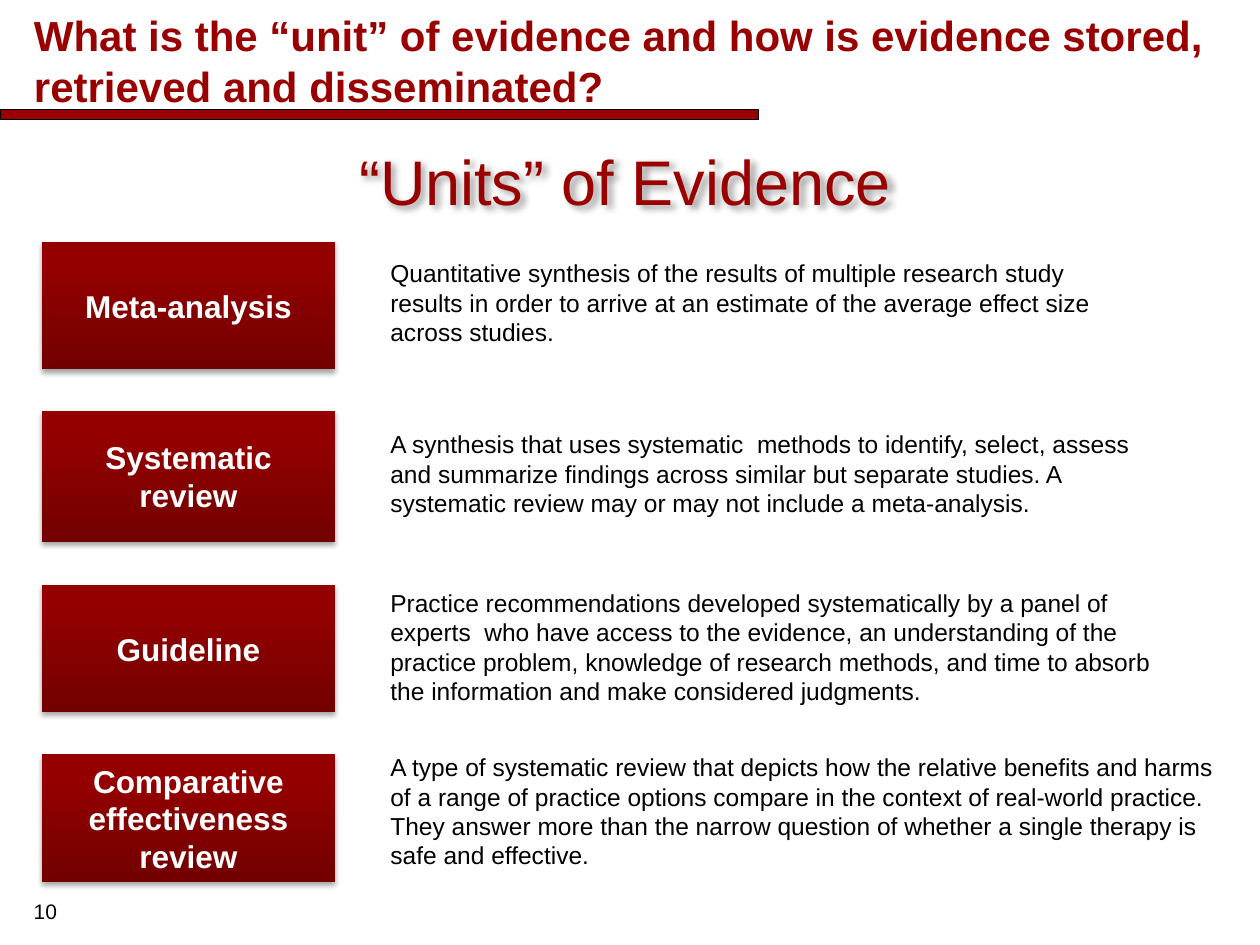
from copy import deepcopy

from lxml import etree
from pptx import Presentation
from pptx.dml.color import RGBColor
from pptx.enum.shapes import MSO_SHAPE
from pptx.enum.text import MSO_ANCHOR, MSO_AUTO_SIZE, PP_ALIGN
from pptx.oxml.ns import qn
from pptx.util import Cm, Pt

RECTANGLE = MSO_SHAPE.RECTANGLE
TOP, MIDDLE = MSO_ANCHOR.TOP, MSO_ANCHOR.MIDDLE
LEFT, CENTER = PP_ALIGN.LEFT, PP_ALIGN.CENTER
NO_FIT = MSO_AUTO_SIZE.NONE

COLORS = {
    "red": "990000",
    "black": "000000",
    "white": "FFFFFF",
    "dark red": "720000",
    "mid red": "940000",
    "light red": "950000",
}
FONT = "Arial"


def write(shape, text, size=14, color="black", bold=False, align=LEFT,
          anchor=TOP, wrap=True):
    frame = shape.text_frame
    frame.auto_size = NO_FIT
    frame.word_wrap = wrap
    frame.vertical_anchor = anchor
    para = frame.paragraphs[0]
    para.alignment = align
    span = para.add_run()
    span.text = text
    span.font.name = FONT
    span.font.size = Pt(size)
    span.font.bold = bold
    span.font.color.rgb = RGBColor.from_string(COLORS[color])


def add_shadow(shape, blur, distance, angle, opacity):
    shape.shadow.inherit = False
    effects = shape._element.spPr.find(qn("a:effectLst"))
    shadow = etree.SubElement(
        effects, qn("a:outerShdw"), blurRad=str(Pt(blur)), dist=str(Pt(distance)),
        dir=str(angle * 60000), algn="ctr", rotWithShape="0")
    tint = etree.SubElement(shadow, qn("a:srgbClr"), val=COLORS["black"])
    etree.SubElement(tint, qn("a:alpha"), val=str(opacity * 1000))


deck = Presentation()
deck.slide_width, deck.slide_height = Cm(25.4), Cm(19.05)
page = deck.slides.add_slide(deck.slide_layouts[5])

# Bar under the title
bar = page.shapes.add_shape(RECTANGLE, 0, Cm(2.21), Cm(15.29), Cm(0.2))
bar.shadow.inherit = False
bar.fill.solid()
bar.fill.fore_color.rgb = RGBColor.from_string(COLORS["red"])
bar.line.color.rgb = RGBColor.from_string(COLORS["black"])
bar.line.width = Pt(0.75)

# Title
title = page.shapes.title
title.left, title.top = Cm(0.43), Cm(0.23)
title.width, title.height = Cm(24.59), Cm(1.96)
write(title, "What is the “unit” of evidence and how is evidence stored, "
      "retrieved and disseminated?", size=24, color="red", bold=True, anchor=MIDDLE)

# Page number
number = page.shapes.add_textbox(Cm(0.43), Cm(17.98), Cm(5.28), Cm(0.69))
write(number, "10", size=12)

# Heading
heading = page.shapes.add_textbox(Cm(6.99), Cm(2.74), Cm(11.35), Cm(1.8))
write(heading, "“Units” of Evidence", size=36, color="red", wrap=False)
add_shadow(heading, blur=4, distance=3, angle=45, opacity=40)

# Units: name, box top and height, description top, width and height, description
UNITS = [
    ("Meta-analysis", 4.88, 2.57, 5.08, 15.67, 2.06,
     "Quantitative synthesis of the results of multiple research study results in "
     "order to arrive at an estimate of the average effect size across studies."),
    ("Systematic review", 8.28, 2.64, 8.53, 16.31, 2.06,
     "A synthesis that uses systematic  methods to identify, select, assess and "
     "summarize findings across similar but separate studies. A systematic review "
     "may or may not include a meta-analysis."),
    ("Guideline", 11.79, 2.57, 11.73, 16.51, 2.64,
     "Practice recommendations developed systematically by a panel of experts  who "
     "have access to the evidence, an understanding of the practice problem, "
     "knowledge of research methods, and time to absorb the information and make "
     "considered judgments."),
    ("Comparative effectiveness review", 15.21, 2.57, 15.04, 17.4, 2.64,
     "A type of systematic review that depicts how the relative benefits and harms "
     "of a range of practice options compare in the context of real-world practice. "
     "They answer more than the narrow question of whether a single therapy is safe "
     "and effective."),
]
STOPS = [(0, "dark red"), (0.8, "mid red"), (1, "light red")]

for name, box_top, box_height, text_top, text_width, text_height, text in UNITS:
    group = page.shapes.add_group_shape()

    # Name box, darker towards the bottom
    box = group.shapes.add_shape(RECTANGLE, Cm(0.84), Cm(box_top), Cm(5.92),
                                 Cm(box_height))
    box.fill.gradient()
    box.fill.gradient_angle = 90
    stop_list = box._element.spPr.find(".//" + qn("a:gsLst"))
    stop_list.append(deepcopy(stop_list[-1]))
    for stop, (position, color) in zip(box.fill.gradient_stops, STOPS):
        stop.position = position
        stop.color.rgb = RGBColor.from_string(COLORS[color])
    box.line.fill.background()
    add_shadow(box, blur=3.1, distance=1.8, angle=90, opacity=35)
    write(box, name, size=18, color="white", bold=True, align=CENTER, anchor=MIDDLE)

    # Description
    description = group.shapes.add_textbox(Cm(7.62), Cm(text_top), Cm(text_width),
                                           Cm(text_height))
    write(description, text)

deck.save("out.pptx")
